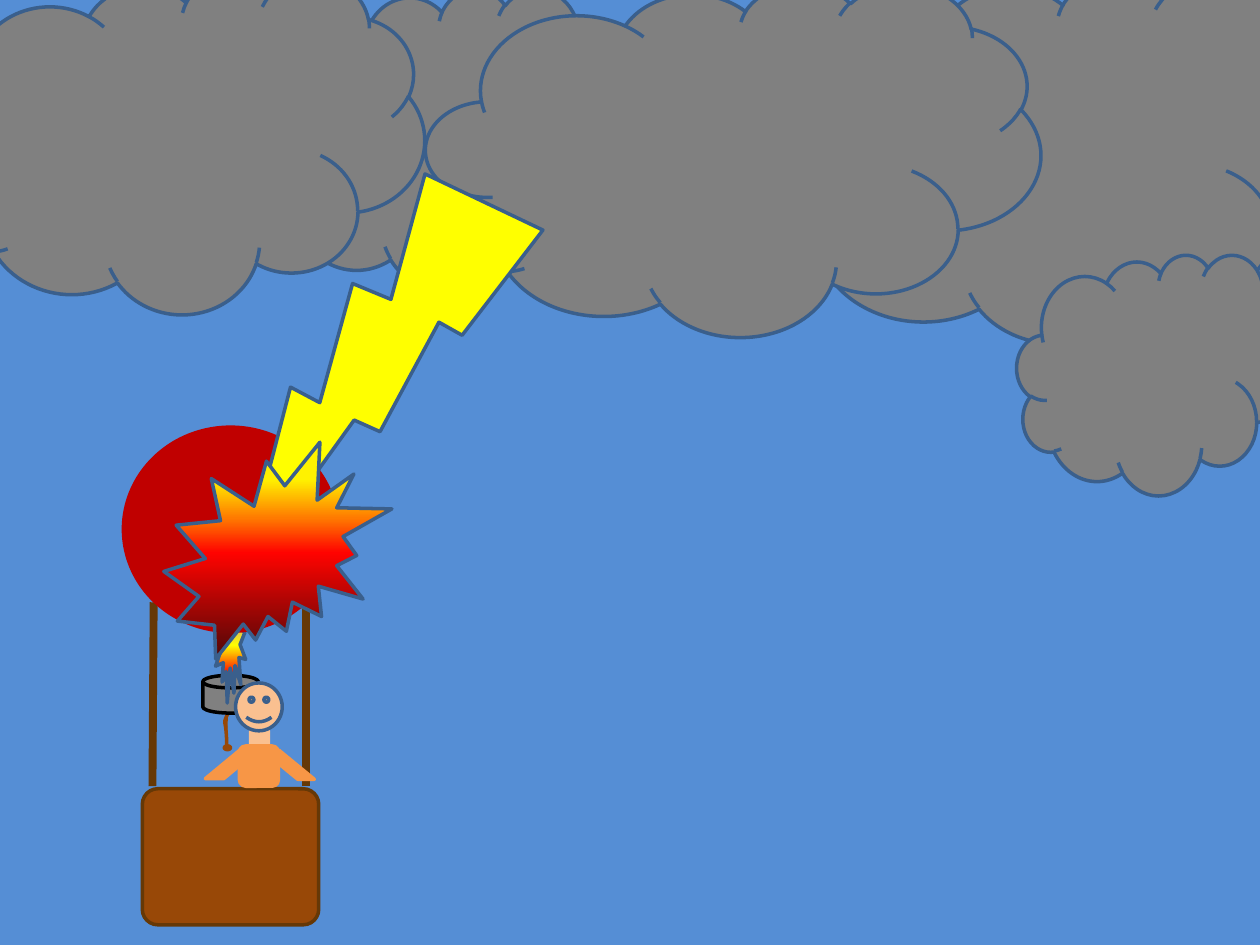
from lxml import etree
from pptx import Presentation
from pptx.dml.color import RGBColor
from pptx.enum.shapes import MSO_CONNECTOR, MSO_SHAPE
from pptx.oxml.ns import qn
from pptx.util import Inches, Pt

CLOUD = MSO_SHAPE.CLOUD
ROUNDED = MSO_SHAPE.ROUNDED_RECTANGLE
OVAL = MSO_SHAPE.OVAL
DISK = MSO_SHAPE.FLOWCHART_MAGNETIC_DISK
FLAME = MSO_SHAPE.EXPLOSION1
BLAST = MSO_SHAPE.EXPLOSION2
FACE = MSO_SHAPE.SMILEY_FACE
STRIPE = MSO_SHAPE.DIAGONAL_STRIPE
BOLT = MSO_SHAPE.LIGHTNING_BOLT
STRAIGHT = MSO_CONNECTOR.STRAIGHT

COLORS = {
    "sky": "558ED5", "cloud": "808080", "outline": "3A5F8C", "skin": "FAC090",
    "rope": "663806", "wicker": "984807", "burner": "808080", "black": "000000",
    "balloon": "C00000", "shirt": "F79646", "bolt": "FFFF00",
}
FLAME_STOPS = [(0, "E46C0A"), (29, "D39F7C"), (49, "FFFF00"), (75, "FF0000"), (100, "E1E8F5")]
BLAST_STOPS = [(17, "FFF200"), (35, "FF7A00"), (51, "FF0300"), (100, "4D0808")]

WIDTH, HEIGHT = Inches(10), Inches(7.5)
COLUMNS, ROWS = 1000, 750
COLUMN, ROW = WIDTH // COLUMNS, HEIGHT // ROWS

BACK_CLOUD = [(198, -9, 294, 237)]
FRONT_CLOUDS = [
    (594, -19, 480, 291), (338, -13, 488, 280),
    (807, 202, 220, 191), (-57, -19, 394, 268),
]
ROPES = [((122, 478), (121, 624)), ((243, 478), (243, 624))]
PULL_CORD = [(181, 566), (176, 577), (180, 568), (180, 594)]
CORD_STEPS = 16

NECK = [(ROUNDED, (199, 578, 14, 19), "skin", "skin", None, 0)]
BASKET = [(ROUNDED, (113, 626, 140, 108), "wicker", "rope", 0.114, 0)]
BURNER_AND_PILOT = [
    (OVAL, (178, 592, 5, 3), "wicker", "wicker", None, 0),
    (DISK, (161, 536, 44, 30), "burner", "black", None, 0),
    (FLAME, (171, 468, 24, 90), FLAME_STOPS, "outline", None, 0),
    (OVAL, (98, 339, 170, 162), "balloon", "balloon", None, 0),
    (ROUNDED, (190, 592, 31, 32), "shirt", "shirt", None, 0),
    (FACE, (187, 542, 37, 38), "skin", "outline", None, 0),
    (STRIPE, (224, 593, 23, 28), "shirt", "shirt", 0.532, 270),
    (STRIPE, (163, 594, 29, 24), "shirt", "shirt", None, 180),
]
STRIKE = [
    (BOLT, (185, 113, 213, 341), "bolt", "outline", None, 61.8),
    (BLAST, (130, 351, 181, 172), BLAST_STOPS, "outline", None, 0),
]


def rgb(name):
    return RGBColor.from_string(COLORS[name])


def fill_gradient(part, stops):
    part.fill.gradient()
    part.fill.gradient_angle = 270
    stop_list = part.fill._fill._gradFill.find(qn("a:gsLst"))
    for stop in list(stop_list):
        stop_list.remove(stop)
    for percent, color in stops:
        stop = etree.SubElement(stop_list, qn("a:gs"), pos=str(percent * 1000))
        etree.SubElement(stop, qn("a:srgbClr"), val=color)


def paint(part, fill, line):
    part.shadow.inherit = False
    if isinstance(fill, list):
        fill_gradient(part, fill)
    else:
        part.fill.solid()
        part.fill.fore_color.rgb = rgb(fill)
    part.line.color.rgb = rgb(line)
    part.line.width = Pt(2)


def draw(shapes, parts):
    for kind, (column, row, columns, rows), fill, line, adjustment, turn in parts:
        part = shapes.add_shape(kind, column * COLUMN, row * ROW, columns * COLUMN, rows * ROW)
        if adjustment is not None:
            part.adjustments[0] = adjustment
        part.rotation = turn
        paint(part, fill, line)


def draw_clouds(shapes, boxes):
    draw(shapes, [(CLOUD, box, "cloud", "outline", None, 0) for box in boxes])


def draw_ropes(shapes):
    for (x1, y1), (x2, y2) in ROPES:
        rope = shapes.add_connector(STRAIGHT, x1 * COLUMN, y1 * ROW, x2 * COLUMN, y2 * ROW)
        rope.line.color.rgb = rgb("rope")
        rope.line.width = Pt(4.5)
        etree.SubElement(rope._element.spPr, qn("a:effectLst"))


def curve_point(t):
    weights = ((1 - t) ** 3, 3 * t * (1 - t) ** 2, 3 * t * t * (1 - t), t ** 3)
    return tuple(
        round(sum(w * p[axis] for w, p in zip(weights, PULL_CORD)) * unit)
        for axis, unit in enumerate((COLUMN, ROW))
    )


def draw_pull_cord(shapes):
    points = [curve_point(step / CORD_STEPS) for step in range(CORD_STEPS + 1)]
    builder = shapes.build_freeform(*points[0])
    builder.add_line_segments(points[1:], close=False)
    paint(builder.convert_to_shape(), "wicker", "wicker")


def main():
    deck = Presentation()
    deck.slide_width, deck.slide_height = WIDTH, HEIGHT
    slide = deck.slides.add_slide(deck.slide_layouts[6])
    slide.background.fill.solid()
    slide.background.fill.fore_color.rgb = rgb("sky")

    draw_clouds(slide.shapes, BACK_CLOUD)
    balloon = slide.shapes.add_group_shape().shapes
    draw(balloon, NECK)
    draw_ropes(balloon)
    draw(balloon, BASKET)
    draw_pull_cord(balloon)
    draw(balloon, BURNER_AND_PILOT)
    draw_clouds(slide.shapes, FRONT_CLOUDS)
    draw(slide.shapes.add_group_shape().shapes, STRIKE)
    deck.save("out.pptx")


if __name__ == "__main__":
    main()
